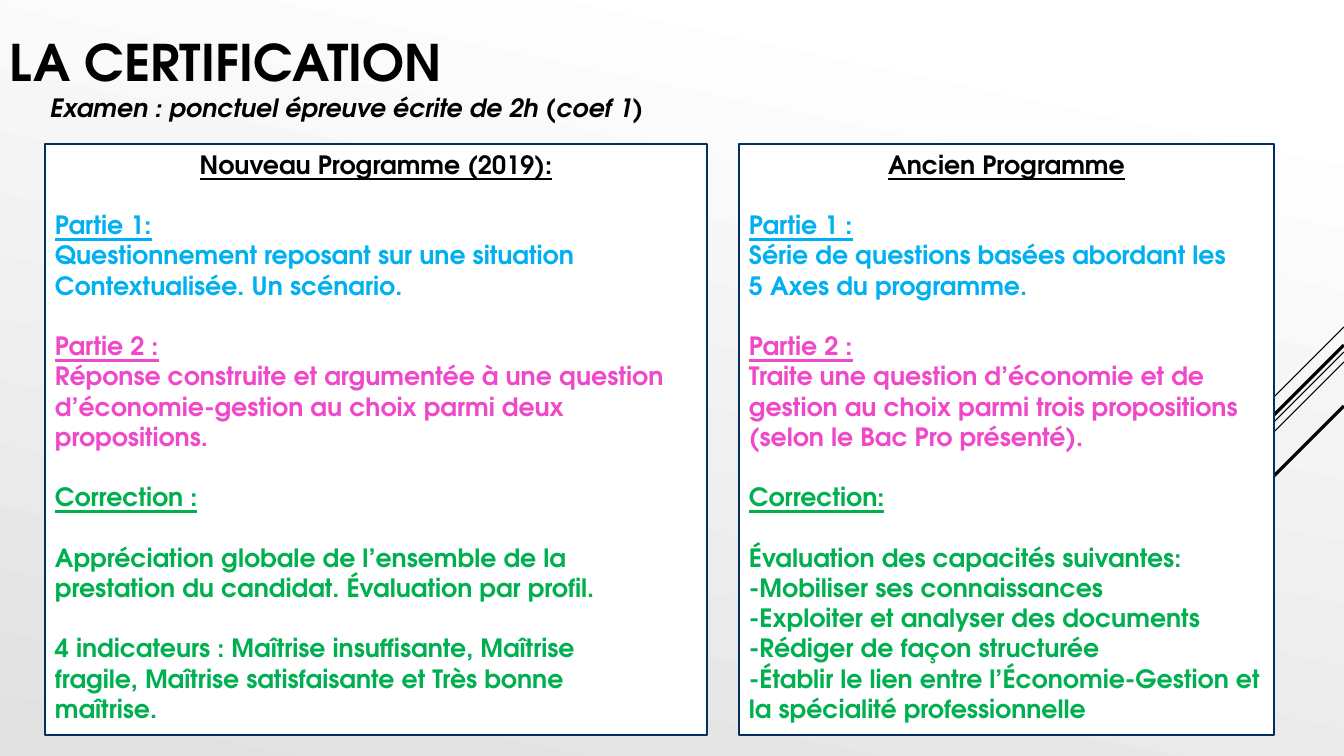
from lxml import etree
from pptx import Presentation
from pptx.dml.color import RGBColor
from pptx.enum.shapes import MSO_CONNECTOR, MSO_SHAPE
from pptx.enum.text import MSO_ANCHOR, PP_ALIGN
from pptx.oxml.ns import qn
from pptx.util import Pt

STRAIGHT, RECT = MSO_CONNECTOR.STRAIGHT, MSO_SHAPE.RECTANGLE
TOP, MIDDLE = MSO_ANCHOR.TOP, MSO_ANCHOR.MIDDLE
LEFT, CENTER = PP_ALIGN.LEFT, PP_ALIGN.CENTER
FONT = "TeX Gyre Adventor"
BLACK, WHITE, NAVY = "000000", "FFFFFF", "052F61"
BLUE, PINK, GREEN = "00B0F0", "EF48C9", "00B050"
SLIDE_W, SLIDE_H = 1344, 756
BLANK_LINE = 21.6

STRIPES = [(327, 101, 0.75), (352, 329, 0.75), (362, 209, 0.75),
           (345, 193, 2.25), (406, 140, 2.25)]

NEW_PROGRAMME = [
    (BLUE, "Partie 1:", [["Questionnement reposant sur une situation",
                          "Contextualisée. Un scénario."]]),
    (PINK, "Partie 2 :", [["Réponse construite et argumentée à une question "
                           "d’économie-gestion au choix parmi deux propositions."]]),
    (GREEN, "Correction :", [
        [],
        ["Appréciation globale de l’ensemble de la",
         "prestation du candidat. Évaluation par profil."],
        ["4 indicateurs : Maîtrise insuffisante, Maîtrise",
         "fragile, Maîtrise satisfaisante et Très bonne",
         "maîtrise."]]),
]
OLD_PROGRAMME = [
    (BLUE, "Partie 1 :", [["Série de questions basées abordant les",
                           "5 Axes du programme."]]),
    (PINK, "Partie 2 :", [["Traite une question d’économie et de",
                           "gestion au choix parmi trois propositions",
                           "(selon le Bac Pro présenté)."]]),
    (GREEN, "Correction:", [
        [],
        ["Évaluation des capacités suivantes:",
         "-Mobiliser ses connaissances",
         "-Exploiter et analyser des documents",
         "-Rédiger de façon structurée",
         "-Établir le lien entre l’Économie-Gestion et",
         "la spécialité professionnelle"]]),
]


def px(n):
    """Turn pixels into EMU."""
    return round(n * 914400 / 100.8)


def rgb(color):
    """Turn a hex string into a colour."""
    return RGBColor.from_string(color)


def add_text(tf, text, size=18, color=BLACK, italic=False, underline=False,
             align=LEFT, before=0):
    """Add one bold paragraph to a text frame."""
    p = tf.paragraphs[0]
    if p.runs:
        p = tf.add_paragraph()
    p.alignment, p.space_before = align, Pt(before)
    r = p.add_run()
    r.text = text
    font = r.font
    font.name, font.size, font.bold = FONT, Pt(size), True
    font.italic, font.underline = italic, underline
    font.color.rgb = rgb(color)


def draw_background(slide):
    """Fill the slide with a pale grey gradient."""
    fill = slide.background.fill
    fill.gradient()
    fill.gradient_angle = 258
    for stop, color, position in zip(fill.gradient_stops, (WHITE, "E1E1E1"), (0.1, 1)):
        stop.color.rgb = rgb(color)
        stop.position = position


def draw_stripes(slide, right):
    """Draw diagonal lines running down and left from the right edge."""
    for y, run, width in STRIPES:
        line = slide.shapes.add_connector(STRAIGHT, px(right), px(y),
                                          px(right - run), px(y + run))
        line.line.color.rgb = rgb(BLACK)
        line.line.width = Pt(width)
        etree.SubElement(line._element.spPr, qn("a:effectLst"))


def draw_heading(slide, x, y, w, h, text, anchor=TOP, **style):
    """Place a one-line heading in a text box."""
    tf = slide.shapes.add_textbox(px(x), px(y), px(w), px(h)).text_frame
    tf.word_wrap, tf.vertical_anchor = True, anchor
    add_text(tf, text, **style)


def draw_programme(slide, x, y, w, h, title, sections):
    """Draw a framed panel with a title and coloured sections."""
    sp = slide.shapes.add_shape(RECT, px(x), px(y), px(w), px(h))
    sp.shadow.inherit = False
    sp.fill.solid()
    sp.fill.fore_color.rgb = rgb(WHITE)
    sp.line.color.rgb = rgb(NAVY)
    sp.line.width = Pt(1.5)
    tf = sp.text_frame
    tf.word_wrap, tf.vertical_anchor = True, TOP
    add_text(tf, title, underline=True, align=CENTER)
    for color, label, blocks in sections:
        add_text(tf, label, color=color, underline=True, before=BLANK_LINE)
        for i, block in enumerate(blocks):
            for j, text in enumerate(block):
                gap = BLANK_LINE if i and not j else 0
                add_text(tf, text, color=color, before=gap)


def main():
    """Build the slide and save it."""
    prs = Presentation()
    prs.slide_width, prs.slide_height = px(SLIDE_W), px(SLIDE_H)
    slide = prs.slides.add_slide(prs.slide_layouts[6])
    draw_background(slide)
    draw_stripes(slide, SLIDE_W)
    draw_heading(slide, 0, 5, 612, 112, "LA CERTIFICATION", anchor=MIDDLE, size=36)
    draw_heading(slide, 40, 87, 632, 40,
                 "Examen : ponctuel épreuve écrite de 2h (coef 1)", italic=True)
    draw_programme(slide, 45, 144, 662, 591, "Nouveau Programme (2019):", NEW_PROGRAMME)
    draw_programme(slide, 739, 144, 535, 591, "Ancien Programme", OLD_PROGRAMME)
    prs.save("out.pptx")


if __name__ == "__main__":
    main()
